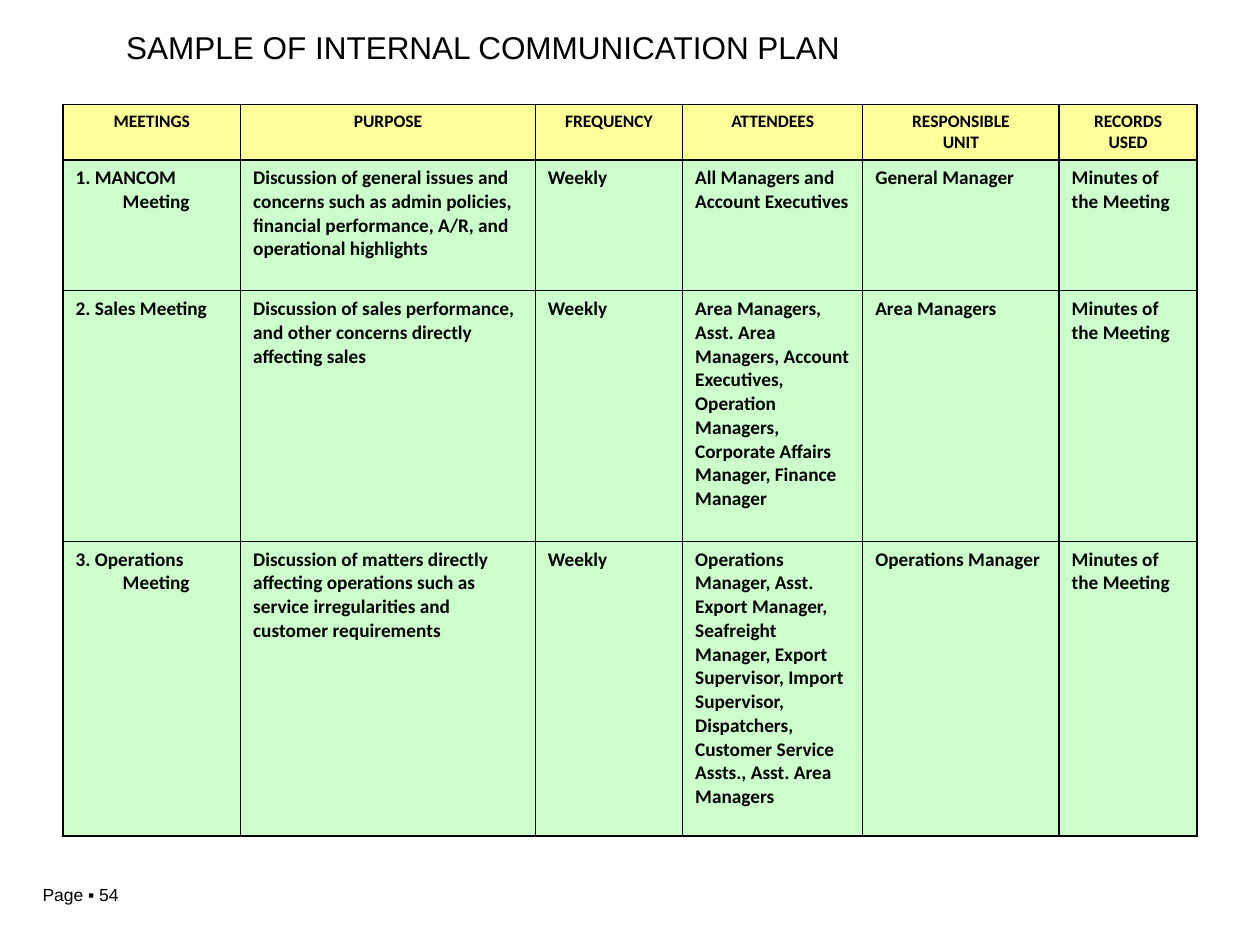
from lxml import etree
from pptx import Presentation
from pptx.dml.color import RGBColor
from pptx.enum.text import MSO_ANCHOR, PP_ALIGN
from pptx.oxml.ns import qn
from pptx.util import Cm, Pt

LEFT, CENTER = PP_ALIGN.LEFT, PP_ALIGN.CENTER
MIDDLE = MSO_ANCHOR.MIDDLE
COLORS = {"text": "000000", "header": "FFFF99", "body": "CCFFCC", "border": "000000"}
HANGING = Cm(0.95)

COL_WIDTHS = [3.58, 5.94, 2.97, 3.63, 3.96, 2.78]
ROW_HEIGHTS = [1.11, 2.64, 5.05, 5.94]
ROWS = [
    ["MEETINGS", "PURPOSE", "FREQUENCY", "ATTENDEES", "RESPONSIBLE\nUNIT", "RECORDS\nUSED"],
    ["1. MANCOM Meeting",
     "Discussion of general issues and concerns such as admin policies, "
     "financial performance, A/R, and operational highlights",
     "Weekly", "All Managers and Account Executives",
     "General Manager", "Minutes of the Meeting"],
    ["2. Sales Meeting",
     "Discussion of sales performance, and other concerns directly affecting sales",
     "Weekly",
     "Area Managers, Asst. Area Managers, Account Executives, Operation Managers, "
     "Corporate Affairs Manager, Finance Manager",
     "Area Managers", "Minutes of the Meeting"],
    ["3. Operations Meeting",
     "Discussion of matters directly affecting operations such as "
     "service irregularities and customer requirements",
     "Weekly",
     "Operations Manager, Asst. Export Manager, Seafreight Manager, Export Supervisor, "
     "Import Supervisor, Dispatchers, Customer Service Assts., Asst. Area Managers",
     "Operations Manager", "Minutes of the Meeting"],
]


def format_text(p, font, size, bold=False, align=LEFT):
    p.alignment = align
    for r in p.runs:
        r.font.name = font
        r.font.size = Pt(size)
        r.font.bold = bold
        r.font.color.rgb = RGBColor.from_string(COLORS["text"])


def add_borders(cell):
    tcPr = cell._tc.get_or_add_tcPr()
    for side in ("a:lnL", "a:lnR", "a:lnT", "a:lnB"):
        ln = etree.SubElement(tcPr, qn(side), w=str(Pt(1)))
        fill = etree.SubElement(ln, qn("a:solidFill"))
        etree.SubElement(fill, qn("a:srgbClr"), val=COLORS["border"])


prs = Presentation()
prs.slide_width, prs.slide_height = Cm(25.4), Cm(19.05)
s = prs.slides.add_slide(prs.slide_layouts[5])

title = s.shapes.title
title.left, title.top, title.width, title.height = Cm(2.29), Cm(0.43), Cm(15), Cm(1.02)
tf = title.text_frame
tf.text = "SAMPLE OF INTERNAL COMMUNICATION PLAN"
tf.word_wrap = False
tf.vertical_anchor = MIDDLE
format_text(tf.paragraphs[0], "Arial", 18)

table = s.shapes.add_table(len(ROWS), len(COL_WIDTHS), Cm(1.27), Cm(2.11),
                           Cm(sum(COL_WIDTHS)), Cm(sum(ROW_HEIGHTS))).table
table.horz_banding = False
table.first_row = False
for column, width in zip(table.columns, COL_WIDTHS):
    column.width = Cm(width)
for row, height in zip(table.rows, ROW_HEIGHTS):
    row.height = Cm(height)

for i, texts in enumerate(ROWS):
    header = i == 0
    for j, text in enumerate(texts):
        cell = table.cell(i, j)
        add_borders(cell)
        cell.fill.solid()
        cell.fill.fore_color.rgb = RGBColor.from_string(COLORS["header" if header else "body"])
        cell.text_frame.text = text
        for p in cell.text_frame.paragraphs:
            if header or j in (0, 2, 4):
                pPr = p._p.get_or_add_pPr()
                pPr.set("marL", str(HANGING))
                pPr.set("indent", str(-HANGING))
            format_text(p, "Calibri", 10 if header else 11, True, CENTER if header else LEFT)

page = s.shapes.add_textbox(Cm(0.61), Cm(17.68), Cm(3.73), Cm(0.69))
tf = page.text_frame
tf.text = "Page ▪ 54"
tf.word_wrap = True
tf.vertical_anchor = MIDDLE
format_text(tf.paragraphs[0], "Arial", 10)

prs.save("out.pptx")
